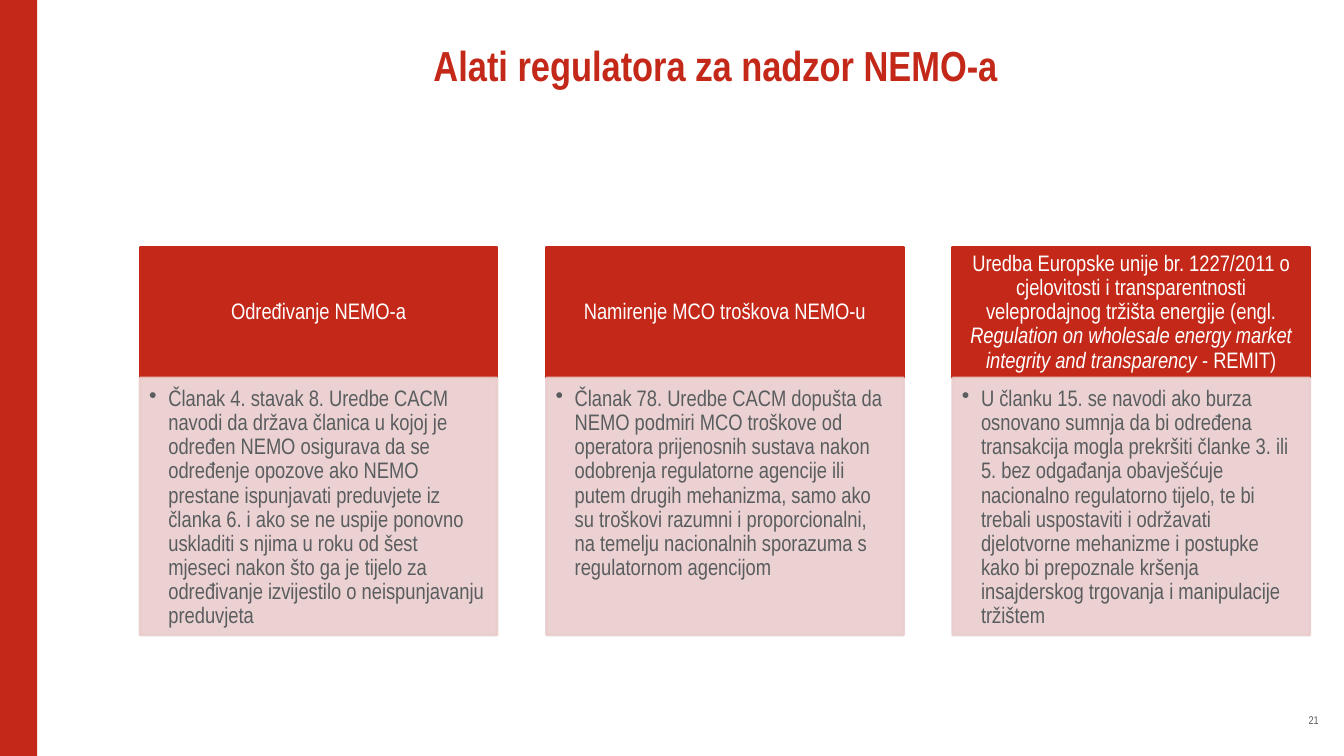
from lxml.etree import SubElement
from pptx import Presentation
from pptx.dml.color import RGBColor
from pptx.enum.shapes import MSO_SHAPE
from pptx.enum.text import MSO_ANCHOR, PP_ALIGN
from pptx.oxml.ns import qn
from pptx.util import Inches, Pt

COLORS = {"red": "C32819", "pink": "E9CDCC", "gray": "5A5D5F", "white": "FFFFFF"}
FONT = "Arial Narrow"
CARD_LEFT, CARD_TOP = 1.39, 2.45
CARD_WIDTH, CARD_PITCH = 3.54, 4.03
HEADING_HEIGHT, DETAIL_HEIGHT = 1.3, 2.55
HANGING = 0.19

# Each card: heading as (text, italic) runs, then its detail
CARDS = [
    ([("Određivanje NEMO-a", False)],
     "Članak 4. stavak 8. Uredbe CACM navodi da država članica u kojoj je određen NEMO "
     "osigurava da se određenje opozove ako NEMO prestane ispunjavati preduvjete iz "
     "članka 6. i ako se ne uspije ponovno uskladiti s njima u roku od šest mjeseci "
     "nakon što ga je tijelo za određivanje izvijestilo o neispunjavanju preduvjeta"),
    ([("Namirenje MCO troškova NEMO-u", False)],
     "Članak 78. Uredbe CACM dopušta da NEMO podmiri MCO troškove od operatora "
     "prijenosnih sustava nakon odobrenja regulatorne agencije ili putem drugih "
     "mehanizma, samo ako su troškovi razumni i proporcionalni, na temelju nacionalnih "
     "sporazuma s regulatornom agencijom"),
    ([("Uredba Europske unije br. 1227/2011 o cjelovitosti i transparentnosti "
       "veleprodajnog tržišta energije (engl. ", False),
      ("Regulation on wholesale energy market integrity and transparency", True),
      (" - REMIT)", False)],
     "U članku 15. se navodi ako burza osnovano sumnja da bi određena transakcija mogla "
     "prekršiti članke 3. ili 5. bez odgađanja obavješćuje nacionalno regulatorno "
     "tijelo, te bi trebali uspostaviti i održavati djelotvorne mehanizme i postupke "
     "kako bi prepoznale kršenja insajderskog trgovanja i manipulacije tržištem"),
]


def rgb(name):
    return RGBColor.from_string(COLORS[name])


def add_panel(slide, box, color, line_width=None, alpha=None):
    """Add a rectangle; alpha is the opacity in percent of fill and line."""
    panel = slide.shapes.add_shape(MSO_SHAPE.RECTANGLE, *map(Inches, box))
    panel.shadow.inherit = False
    panel.fill.solid()
    panel.fill.fore_color.rgb = rgb(color)
    if line_width is None:
        panel.line.fill.background()
    else:
        panel.line.color.rgb = rgb(color)
        panel.line.width = Pt(line_width)
    if alpha is not None:
        for tint in panel.element.spPr.iter(qn("a:srgbClr")):
            SubElement(tint, qn("a:alpha"), val=str(alpha * 1000))
    return panel


def set_up_frame(shape, anchor, insets=(0, 0, 0, 0)):
    frame = shape.text_frame
    frame.word_wrap = True
    frame.vertical_anchor = anchor
    (frame.margin_left, frame.margin_top,
     frame.margin_right, frame.margin_bottom) = map(Inches, insets)
    return frame.paragraphs[0]


def style(paragraph, size, color, align, bold=False):
    paragraph.alignment = align
    paragraph.font.name = FONT
    paragraph.font.size = Pt(size)
    paragraph.font.bold = bold
    paragraph.font.color.rgb = rgb(color)


def add_label(slide, box, text, **look):
    label = slide.shapes.add_textbox(*map(Inches, box))
    paragraph = set_up_frame(label, MSO_ANCHOR.MIDDLE)
    paragraph.add_run().text = text
    style(paragraph, **look)


def add_bullet(paragraph):
    properties = paragraph._p.get_or_add_pPr()
    properties.set("marL", str(Inches(HANGING)))
    properties.set("indent", str(-Inches(HANGING)))
    SubElement(properties, qn("a:buChar"), char="•")


def add_card(slide, left, top, heading_runs, detail_text):
    heading = add_panel(slide, (left, top, CARD_WIDTH, HEADING_HEIGHT), "red", 2)
    paragraph = set_up_frame(heading, MSO_ANCHOR.MIDDLE, (0.12, 0.07, 0.12, 0.07))
    for text, italic in heading_runs:
        run = paragraph.add_run()
        run.text = text
        run.font.italic = italic
    style(paragraph, 16, "white", PP_ALIGN.CENTER)
    paragraph.line_spacing = 0.9

    detail = add_panel(slide, (left, top + HEADING_HEIGHT, CARD_WIDTH, DETAIL_HEIGHT),
                       "pink", 2, alpha=90)
    paragraph = set_up_frame(detail, MSO_ANCHOR.TOP, (0.09, 0.09, 0.12, 0.14))
    paragraph.level = 1
    add_bullet(paragraph)
    paragraph.add_run().text = detail_text
    style(paragraph, 16, "gray", PP_ALIGN.LEFT)
    paragraph.line_spacing = 0.9


def main():
    presentation = Presentation()
    presentation.slide_width = Inches(13.33)
    presentation.slide_height = Inches(7.5)
    slide = presentation.slides.add_slide(presentation.slide_layouts[6])

    add_panel(slide, (0, 0, 0.37, 7.5), "red")
    add_label(slide, (1.1, 0.13, 12, 1.02), "Alati regulatora za nadzor NEMO-a",
              size=30, color="red", align=PP_ALIGN.CENTER, bold=True)
    for column, (heading_runs, detail_text) in enumerate(CARDS):
        add_card(slide, CARD_LEFT + column * CARD_PITCH, CARD_TOP,
                 heading_runs, detail_text)
    add_label(slide, (12.42, 7.08, 0.66, 0.13), "21",
              size=8, color="gray", align=PP_ALIGN.RIGHT)
    presentation.save("out.pptx")


if __name__ == "__main__":
    main()
